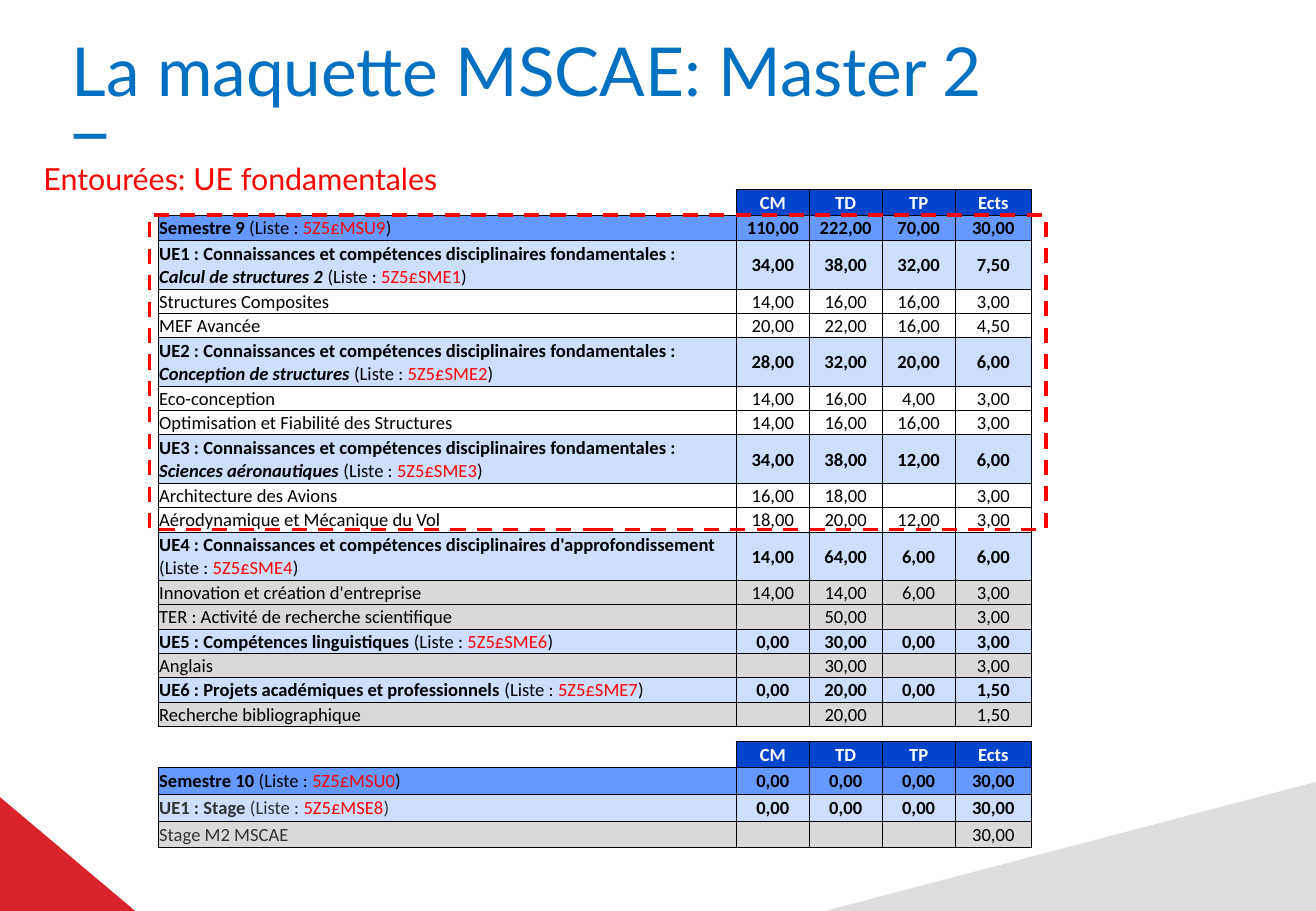
import pptx
import pptx.util
import pptx.dml.color
import pptx.enum.dml
import pptx.enum.shapes
import pptx.enum.text
import pptx.oxml.ns
from lxml import etree

Inches = pptx.util.Inches
Pt = pptx.util.Pt
qn = pptx.oxml.ns.qn
ALIGN = pptx.enum.text.PP_ALIGN
MIDDLE = pptx.enum.text.MSO_ANCHOR.MIDDLE

NAVY, BLUE, PALE, GREY = "0044CC", "6699FF", "CDDEFF", "D9D9D9"
BLACK, DARK, RED, WHITE = "000000", "333333", "FF0000", "FFFFFF"
CORE = "Connaissances et compétences disciplinaires fondamentales :"
HEAD = (NAVY, "", "", "", "CM TD TP Ects")


def color(code):
    return pptx.dml.color.RGBColor.from_string(code)


def edge(cell, side, shown):
    line = etree.SubElement(cell._tc.get_or_add_tcPr(), qn("a:ln" + side))
    if shown:
        line.set("w", str(Pt(0.5)))
        fill = etree.SubElement(line, qn("a:solidFill"))
        etree.SubElement(fill, qn("a:srgbClr"), val=BLACK)
    else:
        etree.SubElement(line, qn("a:noFill"))


deck = pptx.Presentation()
deck.slide_width, deck.slide_height = Inches(10.83), Inches(7.5)
slide = deck.slides.add_slide(deck.slide_layouts[6])
shapes = slide.shapes

# Corner wedges, bleeding over the slide edges
corners = [
    ("D8232A", [(-9.72, 7.54), (1.16, 7.54), (-7.79, 0), (-9.74, 0)]),
    ("DCDEE0", [(13.9, 5.63), (2.34, 8.67), (2.3, 9.71), (13.92, 9.71)]),
]
for tint, points in corners:
    start, *rest = [(Inches(x), Inches(y)) for x, y in points]
    form = shapes.build_freeform(*start)
    form.add_line_segments(rest)
    corner = form.convert_to_shape()
    corner.shadow.inherit = False
    corner.fill.solid()
    corner.fill.fore_color.rgb = color(tint)
    corner.line.fill.background()

# Title and caption: box, inset, wrap, lines of text
texts = [
    ((0.56, 0.21, 8.35, 1.12), 0.03, True, "0070C0",
     [("La maquette MSCAE: Master 2", 40), ("_", 49)]),
    ((0.2, 1.26, 3.56, 0.42), 0.06, False, RED,
     [("Entourées: UE fondamentales", 18)]),
]
for box, inset, wrap, tint, lines in texts:
    frame = shapes.add_textbox(*map(Inches, box)).text_frame
    frame.word_wrap = wrap
    frame.margin_left = frame.margin_right = Inches(inset)
    frame.margin_top = frame.margin_bottom = Inches(inset)
    if not wrap:
        frame.vertical_anchor = MIDDLE
    for i, (text, size) in enumerate(lines):
        para = frame.add_paragraph() if i else frame.paragraphs[0]
        para.text = text
        para.font.name, para.font.size = "Lato", Pt(size)
        para.font.color.rgb = color(tint)
        if i:
            para.line_spacing = Pt(19.9)
        if not wrap:
            para.alignment = ALIGN.CENTER

# Rows: fill, title, subtitle, list code, hours and credits ("-" is empty)
autumn = [
    HEAD,
    (BLUE, "Semestre 9 ", "", "5Z5£MSU9", "110,00 222,00 70,00 30,00"),
    (PALE, "UE1 : " + CORE, "Calcul de structures 2 ", "5Z5£SME1", "34,00 38,00 32,00 7,50"),
    (None, "Structures Composites", "", "", "14,00 16,00 16,00 3,00"),
    (None, "MEF Avancée", "", "", "20,00 22,00 16,00 4,50"),
    (PALE, "UE2 : " + CORE, "Conception de structures ", "5Z5£SME2", "28,00 32,00 20,00 6,00"),
    (None, "Eco-conception", "", "", "14,00 16,00 4,00 3,00"),
    (None, "Optimisation et Fiabilité des Structures", "", "", "14,00 16,00 16,00 3,00"),
    (PALE, "UE3 : " + CORE, "Sciences aéronautiques ", "5Z5£SME3", "34,00 38,00 12,00 6,00"),
    (None, "Architecture des Avions", "", "", "16,00 18,00 - 3,00"),
    (None, "Aérodynamique et Mécanique du Vol", "", "", "18,00 20,00 12,00 3,00"),
    (PALE, "UE4 : Connaissances et compétences disciplinaires d'approfondissement ", "",
     "5Z5£SME4", "14,00 64,00 6,00 6,00"),
    (GREY, "Innovation et création d'entreprise", "", "", "14,00 14,00 6,00 3,00"),
    (GREY, "TER : Activité de recherche scientifique", "", "", "- 50,00 - 3,00"),
    (PALE, "UE5 : Compétences linguistiques ", "", "5Z5£SME6", "0,00 30,00 0,00 3,00"),
    (GREY, "Anglais", "", "", "- 30,00 - 3,00"),
    (PALE, "UE6 : Projets académiques et professionnels ", "", "5Z5£SME7", "0,00 20,00 0,00 1,50"),
    (GREY, "Recherche bibliographique", "", "", "- 20,00 - 1,50"),
]
spring = [
    HEAD,
    (BLUE, "Semestre 10 ", "", "5Z5£MSU0", "0,00 0,00 0,00 30,00"),
    (PALE, "UE1 : Stage ", "", "5Z5£MSE8", "0,00 0,00 0,00 30,00"),
    (GREY, "Stage M2 MSCAE", "", "", "- - - 30,00"),
]
tall = (2, 5, 8, 11)
highs = [0.21 if r < 2 else 0.4 if r in tall else 0.2 for r in range(len(autumn))]
plans = [(1.56, autumn, highs), (6.1, spring, [0.22] * len(spring))]

# Tables
for top, rows, highs in plans:
    table = shapes.add_table(len(rows), 5, Inches(1.3), Inches(top),
                             Inches(7.19), Inches(sum(highs))).table
    table.first_row = table.horz_banding = False
    for col, width in zip(table.columns, (4.76, 0.6, 0.6, 0.6, 0.63)):
        col.width = Inches(width)
    for r, (tint, title, sub, code, data) in enumerate(rows):
        table.rows[r].height = Inches(highs[r])
        strong = tint in (NAVY, BLUE, PALE)
        ink = DARK if rows is spring and r > 1 else BLACK
        for c, value in enumerate([title] + data.split()):
            cell = table.cell(r, c)
            cell.vertical_anchor = MIDDLE
            cell.margin_left = cell.margin_right = cell.margin_top = Inches(0.01)
            cell.margin_bottom = 0
            blank = r == 0 and c == 0
            for side in "LRTB":
                edge(cell, side, not blank or side in "RB")
            if tint and not blank:
                cell.fill.solid()
                cell.fill.fore_color.rgb = color(tint)
            else:
                cell.fill.background()

            para = cell.text_frame.paragraphs[0]
            para.font.name, para.font.size = "Calibri", Pt(11)
            para.alignment = ALIGN.CENTER if c else ALIGN.LEFT
            if value in ("", "-"):
                etree.SubElement(para._p, qn("a:endParaRPr"), sz="1100")
                continue
            # Pieces: text, bold, italic, colour
            pieces = [(value, strong, False, WHITE if r == 0 else BLACK if c else ink)]
            if c == 0 and sub:
                pieces.append((sub, True, True, ink))
            if c == 0 and code:
                pieces += [("(Liste : ", False, False, ink),
                           (code, False, False, RED), (")", False, False, ink)]
            for text, bold, slant, shade in pieces:
                if slant:
                    para.add_line_break()
                run = para.add_run()
                run.text = text
                run.font.bold, run.font.italic = bold, slant
                run.font.color.rgb = color(shade)

    # Dashed frame round the core units, above the first table
    if rows is autumn:
        frame = shapes.add_shape(pptx.enum.shapes.MSO_SHAPE.RECTANGLE,
                                 *map(Inches, (1.23, 1.77, 7.38, 2.59)))
        frame.shadow.inherit = False
        frame.fill.background()
        frame.line.color.rgb = color(RED)
        frame.line.width = Pt(2.25)
        frame.line.dash_style = pptx.enum.dml.MSO_LINE.DASH

deck.save("out.pptx")
